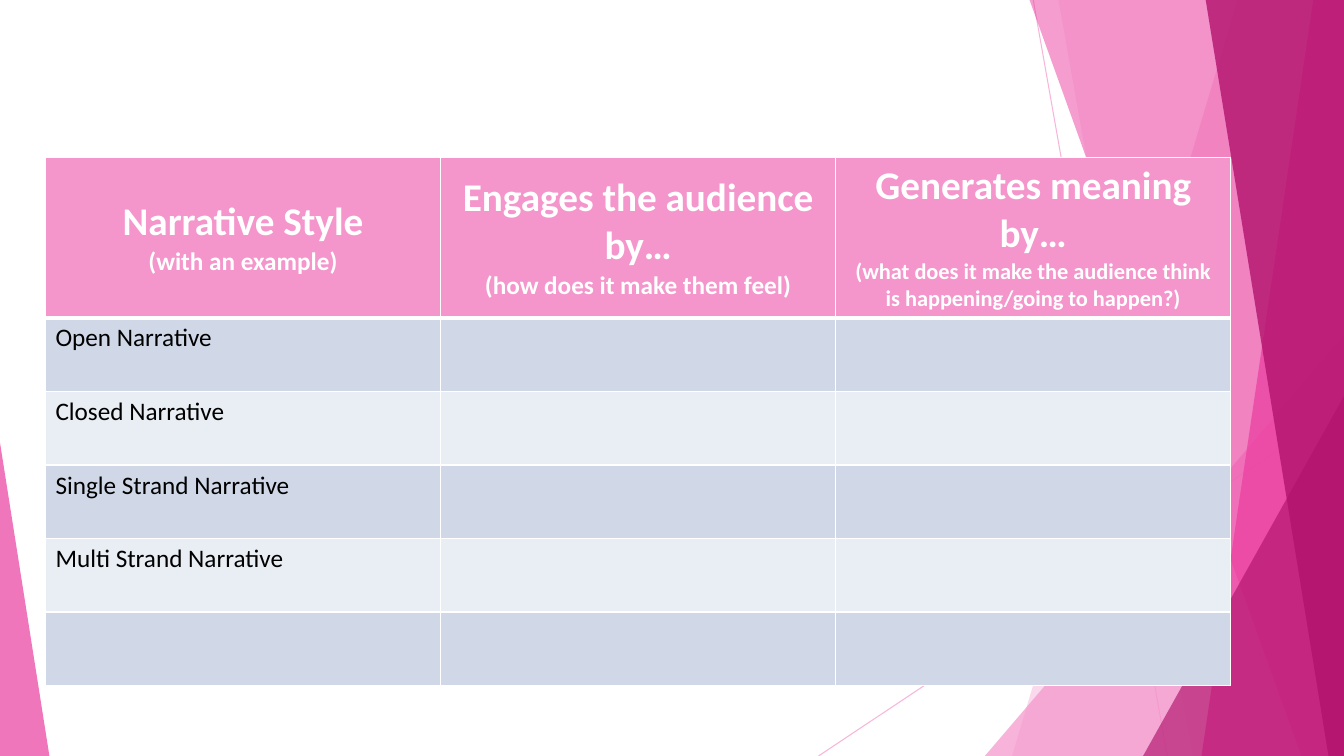
from dataclasses import dataclass

from lxml.etree import SubElement
from pptx import Presentation
from pptx.dml.color import RGBColor
from pptx.enum.shapes import MSO_CONNECTOR as Conn, MSO_SHAPE as Shp
from pptx.enum.text import MSO_ANCHOR as Anchor, PP_ALIGN as Align
from pptx.oxml.ns import qn
from pptx.util import Inches, Pt

WIDTH, HEIGHT = Inches(13.333), Inches(7.5)
PINK, ROSE, BERRY = "F496CB", "EB3D9F", "B2136D"
WHITE, BLACK = "FFFFFF", "000000"
BANDS = ("D0D8E8", "E9EDF4")
FONT = "Calibri"
BLEED = -0.13
TABLE_LEFT, TABLE_TOP = 3.38, 20.8
COL_WIDTH, HEAD_HEIGHT, ROW_HEIGHT = 29.4, 18.53, 9.73


@dataclass
class Ray:
    x1: float
    y1: float
    x2: float
    y2: float


@dataclass
class Facet:
    top_x: float
    bottom_x: float
    color: str
    opacity: int


@dataclass
class Wedge:
    left: float
    top: float
    width: float
    apex: int
    color: str
    opacity: int


@dataclass
class Heading:
    title: str
    hint: str
    hint_size: int


RAYS = [Ray(76.88, 0, 86.85, 100), Ray(100, 53.73, 60.9, 100)]
PANELS = [
    Facet(92.1, 75.3, PINK, 36),
    Facet(78.75, 88.73, PINK, 20),
    Wedge(73.28, 44.4, 26.72, 1, PINK, 72),
    Facet(76.58, 96.83, ROSE, 50),
    Facet(97.73, 89.4, ROSE, 70),
    Facet(89.7, 98.85, BERRY, 80),
    Wedge(85.05, 52.4, 14.95, 1, BERRY, 66),
    Wedge(0, 58.53, 3.68, 0, ROSE, 70),
]
HEADINGS = [
    Heading("Narrative Style", "(with an example)", 18),
    Heading("Engages the audience by…", "(how does it make them feel)", 18),
    Heading("Generates meaning by…",
            "(what does it make the audience think is happening/going to happen?)", 16),
]
STYLES = ["Open Narrative", "Closed Narrative", "Single Strand Narrative",
          "Multi Strand Narrative", ""]


def across(share: float) -> int:
    return round(WIDTH * share / 100)


def down(share: float) -> int:
    return round(HEIGHT * share / 100)


def paint(fill, color: str) -> None:
    fill.solid()
    fill.fore_color.rgb = RGBColor.from_string(color)


def fade(sp, opacity: int) -> None:
    clr = next(sp._element.spPr.iter(qn("a:srgbClr")))
    SubElement(clr, qn("a:alpha"), val=str(opacity * 1000))


def draw_ray(shapes, ray: Ray) -> None:
    sp = shapes.add_connector(Conn.STRAIGHT, across(ray.x1), down(ray.y1),
                              across(ray.x2), down(ray.y2))
    paint(sp.line.fill, PINK)
    sp.line.width = Pt(0.75)
    fade(sp, 70)
    SubElement(sp._element.spPr, qn("a:effectLst"))


def draw_panel(shapes, panel: Facet | Wedge) -> None:
    if isinstance(panel, Facet):
        top, bottom = down(BLEED), down(100)
        outline = shapes.build_freeform(across(panel.top_x), top)
        outline.add_line_segments([(across(100), top), (across(100), bottom),
                                   (across(panel.bottom_x), bottom)])
        sp = outline.convert_to_shape()
    else:
        sp = shapes.add_shape(Shp.ISOSCELES_TRIANGLE, across(panel.left), down(panel.top),
                              across(panel.width), down(100 - panel.top))
        sp.adjustments[0] = panel.apex
    paint(sp.fill, panel.color)
    fade(sp, panel.opacity)
    sp.line.fill.background()
    sp.shadow.inherit = False


def style_cell(cell, color: str, top: int = 1, bottom: int = 1) -> None:
    tc_pr = cell._tc.get_or_add_tcPr()
    for side, width in (("L", 1), ("R", 1), ("T", top), ("B", bottom)):
        ln = SubElement(tc_pr, qn(f"a:ln{side}"), w=str(Pt(width)))
        SubElement(SubElement(ln, qn("a:solidFill")), qn("a:srgbClr"), val=WHITE)
    paint(cell.fill, color)


def style_text(p, size: int, color: str, bold: bool) -> None:
    for r in p.runs:
        r.font.name = FONT
        r.font.size = Pt(size)
        r.font.bold = bold
        r.font.color.rgb = RGBColor.from_string(color)


def draw_table(shapes) -> None:
    rows, cols = len(STYLES) + 1, len(HEADINGS)
    table = shapes.add_table(rows, cols, across(TABLE_LEFT), down(TABLE_TOP),
                             across(COL_WIDTH * cols),
                             down(HEAD_HEIGHT + ROW_HEIGHT * len(STYLES))).table
    for col in table.columns:
        col.width = across(COL_WIDTH)
    for i, row in enumerate(table.rows):
        row.height = down(ROW_HEIGHT if i else HEAD_HEIGHT)
    for j, heading in enumerate(HEADINGS):
        cell = table.cell(0, j)
        style_cell(cell, PINK, bottom=3)
        cell.vertical_anchor = Anchor.MIDDLE
        tf = cell.text_frame
        tf.text = f"{heading.title}\n{heading.hint}"
        for p, size in zip(tf.paragraphs, (28, heading.hint_size)):
            p.alignment = Align.CENTER
            style_text(p, size, WHITE, True)
    for i, style in enumerate(STYLES, 1):
        for j in range(cols):
            style_cell(table.cell(i, j), BANDS[(i - 1) % 2], top=3 if i == 1 else 1)
        tf = table.cell(i, 0).text_frame
        tf.text = style
        style_text(tf.paragraphs[0], 18, BLACK, False)


def main() -> None:
    """Build the narrative styles worksheet slide."""
    prs = Presentation()
    prs.slide_width, prs.slide_height = WIDTH, HEIGHT
    slide = prs.slides.add_slide(prs.slide_layouts[6])
    paint(slide.background.fill, WHITE)
    for ray in RAYS:
        draw_ray(slide.shapes, ray)
    for panel in PANELS:
        draw_panel(slide.shapes, panel)
    draw_table(slide.shapes)
    prs.save("out.pptx")


if __name__ == "__main__":
    main()
